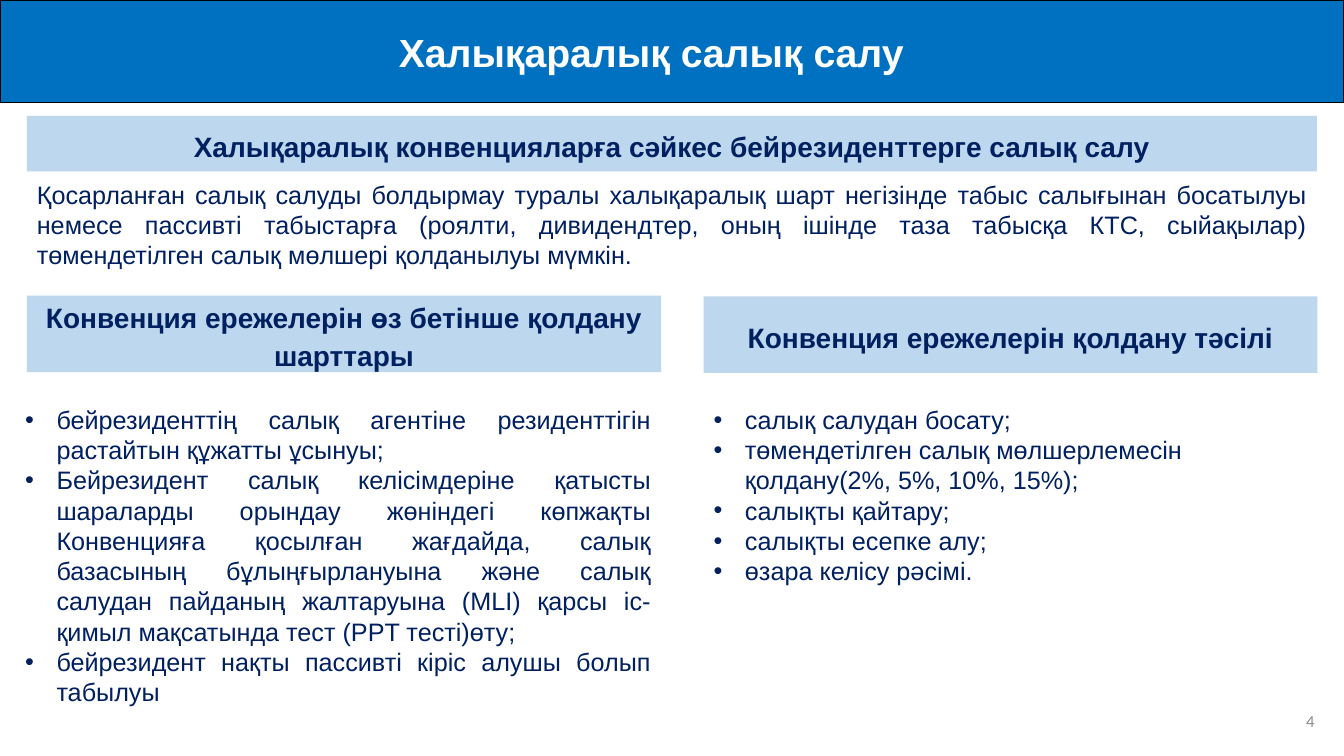
"""Build the slide on international taxation."""
from pptx import Presentation
from pptx.dml.color import RGBColor
from pptx.enum import shapes, text
from pptx.util import Cm, Pt

HEX = {"blue": "0070C0", "pale": "BDD7EE", "navy": "002060",
       "white": "FFFFFF", "black": "000000", "gray": "8C8C8C"}
ALIGN = text.PP_ALIGN
MID = text.MSO_ANCHOR.MIDDLE
TOP = text.MSO_ANCHOR.TOP

TITLE = "Халықаралық салық салу"
INTRO = ("Қосарланған салық салуды болдырмау туралы халықаралық шарт негізінде "
         "табыс салығынан босатылуы немесе пассивті табыстарға (роялти, дивидендтер, "
         "оның ішінде таза табысқа КТС, сыйақылар) төмендетілген салық мөлшері "
         "қолданылуы мүмкін.")
TERMS = [
    "бейрезиденттің салық агентіне резиденттігін растайтын құжатты ұсынуы;",
    "Бейрезидент салық келісімдеріне қатысты шараларды орындау жөніндегі көпжақты "
    "Конвенцияға қосылған жағдайда, салық базасының бұлыңғырлануына және салық "
    "салудан пайданың жалтаруына (MLI) қарсы іс-қимыл мақсатында тест (PPT тесті)өту;",
    "бейрезидент нақты пассивті кіріс алушы болып табылуы",
]
WAYS = [
    "салық салудан босату;",
    "төмендетілген салық мөлшерлемесін қолдану(2%, 5%, 10%, 15%);",
    "салықты қайтару;",
    "салықты есепке алу;",
    "өзара келісу рәсімі.",
]
BANDS = [
    ("Халықаралық конвенцияларға сәйкес бейрезиденттерге салық салу",
     (0.68, 2.92, 32.51, 1.4)),
    ("Конвенция ережелерін өз бетінше қолдану шарттары", (0.68, 7.45, 15.98, 1.93)),
    ("Конвенция ережелерін қолдану тәсілі", (17.73, 7.47, 15.47, 1.93)),
]
LISTS = [
    (TERMS, (0.38, 10.06, 16.28, 8.7), ALIGN.JUSTIFY),
    (WAYS, (17.73, 10.06, 15.47, 4.88), ALIGN.LEFT),
]


def tint(name):
    return RGBColor.from_string(HEX[name])


def place(shape, box):
    shape.left, shape.top, shape.width, shape.height = map(Cm, box)


def paint(shape, name):
    shape.fill.solid()
    shape.fill.fore_color.rgb = tint(name)


def write(shape, lines, size, color, align, bold=False, face="Arial", anchor=TOP):
    frame = shape.text_frame
    frame.text = "\n".join(lines)
    frame.word_wrap = True
    frame.auto_size = text.MSO_AUTO_SIZE.NONE
    frame.vertical_anchor = anchor
    for para in frame.paragraphs:
        para.alignment = align
        para.space_before = Pt(0)
        font = para.font
        font.name, font.size, font.bold = face, Pt(size), bold
        font.color.rgb = tint(color)
    return frame


def main():
    deck = Presentation()
    deck.slide_width, deck.slide_height = Cm(33.87), Cm(19.05)
    slide = deck.slides.add_slide(deck.slide_layouts[3])
    title, *bodies = slide.placeholders

    place(title, (0, 0, 33.87, 2.59))
    paint(title, "blue")
    title.line.color.rgb = tint("black")
    title.line.width = Pt(1)
    frame = write(title, [TITLE], 28, "white", ALIGN.CENTER, True, anchor=MID)
    frame.margin_right = Cm(1.3)

    for label, box in BANDS:
        band = slide.shapes.add_shape(shapes.MSO_SHAPE.RECTANGLE, *map(Cm, box))
        band.shadow.inherit = False
        paint(band, "pale")
        band.line.fill.background()
        frame = write(band, [label], 20, "navy", ALIGN.CENTER, True, anchor=MID)
        frame.paragraphs[0].line_spacing = 1.14

    intro = slide.shapes.add_textbox(*map(Cm, (0.68, 4.39, 32.51, 2.8)))
    write(intro, [INTRO], 18, "navy", ALIGN.JUSTIFY)

    for body, (lines, box, align) in zip(bodies, LISTS):
        place(body, box)
        frame = write(body, lines, 18, "navy", align)
        for para in frame.paragraphs:
            props = para._p.get_or_add_pPr()
            props.set("marL", str(Cm(0.79)))
            props.set("indent", str(-Cm(0.79)))

    number = slide.shapes.add_textbox(*map(Cm, (25.76, 17.65, 7.62, 1.02)))
    write(number, ["4"], 12, "gray", ALIGN.RIGHT, face="Calibri", anchor=MID)
    deck.save("out.pptx")


if __name__ == "__main__":
    main()
